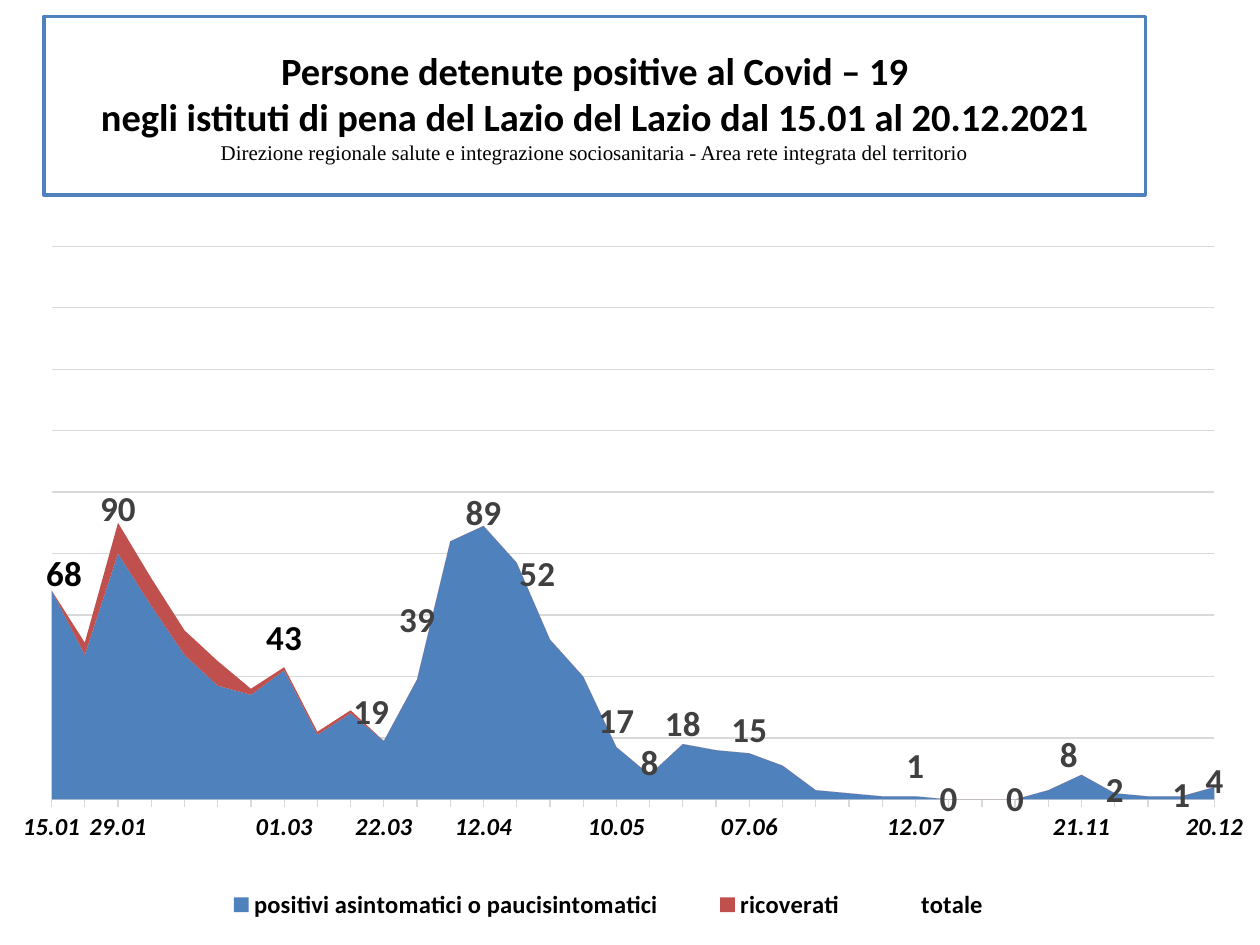
from lxml import etree
from pptx import Presentation
from pptx import util as u
from pptx.chart.data import CategoryChartData
from pptx.dml.color import RGBColor
from pptx.enum import chart as charts, shapes, text
from pptx.oxml.ns import qn

WIDTH, HEIGHT = u.Inches(10), u.Inches(7.5)
BLUE, RED, GRID, BLACK, GREY = "4F81BD", "C0504D", "D9D9D9", "000000", "404040"

DATES = {0: "15.01", 2: "29.01", 7: "01.03", 10: "22.03", 13: "12.04", 17: "10.05",
         21: "07.06", 26: "12.07", 31: "21.11", 35: "20.12"}
MILD = [68, 47, 80, 63, 47, 37, 34, 42, 21, 28, 19, 39, 84, 89, 77, 52, 40, 17,
        8, 18, 16, 15, 11, 3, 2, 1, 1, 0, 0, 0, 3, 8, 2, 1, 1, 4]
HOSPITAL = [0, 4, 10, 9, 8, 8, 2, 1, 1, 1, 0, 0] + [None] * 24
TOTAL = [68, 51, 90, 72, 55, 45, 36, 43, 22, 29, 19, 39, 84, 89, 77, 52, 40, 17,
         8, 18, 16, 15, 11, 3, 2, 1, 1, 0, 0, 0, 0, 8, 2, 1, 1, 4]
LABEL_SHIFTS = {0: (0.01, 0.12), 2: (0, 0.17), 7: (0, 0.05), 10: (-0.01, 0),
                13: (0, 0.17), 15: (-0.01, 0.02), 19: (0, 0.01),
                26: (0, -0.04), 31: (-0.01, -0.01)}
HIDDEN_LABELS = {1, 3, 4, 5, 6, 8, 9, 12, 14, 16, 20, 22, 23, 24, 25, 28, 30, 33}
BLACK_LABELS = {0, 7}


def color(hex_code):
    return RGBColor.from_string(hex_code)


def set_font(font, size, hex_code=BLACK, name="Calibri", bold=True, italic=False):
    font.size = u.Pt(size)
    font.name = name
    font.bold = bold
    font.italic = italic
    font.color.rgb = color(hex_code)


def set_line(line, hex_code, width):
    line.color.rgb = color(hex_code)
    line.width = u.Pt(width)


def write_line(para, content, **style):
    para.alignment = text.PP_ALIGN.CENTER
    span = para.add_run()
    span.text = content
    set_font(span.font, **style)


def add_element(parent, tag, value=None):
    child = etree.SubElement(parent, qn(tag))
    if value is not None:
        child.set("val", str(value))
    return child


def make_layout(**values):
    layout = etree.Element(qn("c:layout"))
    manual = add_element(layout, "c:manualLayout")
    for name, value in values.items():
        add_element(manual, f"c:{name}", value)
    return layout


def set_layout(parent, position, **values):
    for old in parent.findall(qn("c:layout")):
        parent.remove(old)
    parent.insert(position, make_layout(**values))


def add_heading(page):
    box = page.shapes.add_shape(shapes.MSO_SHAPE.RECTANGLE, u.Inches(0.35),
                                u.Inches(0.13), u.Inches(8.74), u.Inches(1.42))
    box.shadow.inherit = False
    box.fill.solid()
    box.fill.fore_color.rgb = color("FFFFFF")
    set_line(box.line, BLUE, 2)
    frame = box.text_frame
    frame.word_wrap = True
    frame.vertical_anchor = text.MSO_ANCHOR.MIDDLE
    write_line(frame.paragraphs[0], "Persone detenute positive al Covid – 19", size=22)
    write_line(frame.add_paragraph(),
               "negli istituti di pena del Lazio del Lazio dal 15.01 al 20.12.2021", size=22)
    write_line(frame.add_paragraph(),
               "Direzione regionale salute e integrazione sociosanitaria"
               " - Area rete integrata del territorio",
               size=12, name="Times New Roman", bold=False)


def label_totals(series):
    labels = series.data_labels
    labels.show_value = True
    set_font(labels.font, 20, GREY)
    for index in sorted(HIDDEN_LABELS | set(LABEL_SHIFTS)):
        hex_code = BLACK if index in BLACK_LABELS else GREY
        set_font(series.points[index].data_label.font, 20, hex_code)
        label = series._element.xpath(f"c:dLbls/c:dLbl[c:idx/@val='{index}']")[0]
        if index in HIDDEN_LABELS:
            for child in list(label)[1:]:
                label.remove(child)
            add_element(label, "c:delete", 1)
        else:
            across, down = LABEL_SHIFTS[index]
            set_layout(label, 1, x=across, y=down)
    group = series._element.find(qn("c:dLbls"))
    for leader in group.findall(qn("c:showLeaderLines")):
        group.remove(leader)
    add_element(group, "c:showLeaderLines", 0)


def style_axes(chart):
    dates = chart.category_axis
    dates.major_tick_mark = charts.XL_TICK_MARK.OUTSIDE
    dates.has_major_gridlines = False
    set_font(dates.tick_labels.font, 14, italic=True)
    set_line(dates.format.line, GRID, 0.75)
    counts = chart.value_axis
    counts.minimum_scale, counts.maximum_scale, counts.major_unit = 0, 180, 20
    counts.has_major_gridlines = True
    set_line(counts.major_gridlines.format.line, GRID, 0.75)
    counts.visible = False
    for crossing in counts._element.findall(qn("c:crossBetween")):
        crossing.set("val", "midCat")


def add_legend(chart):
    chart.has_legend = True
    legend = chart.legend
    legend.position = charts.XL_LEGEND_POSITION.BOTTOM
    legend.include_in_layout = False
    set_font(legend.font, 14)
    set_layout(legend._element, 1, xMode="edge", yMode="edge",
               x=0.14, y=0.91, w=0.68, h=0.07)


def add_case_chart(page):
    data = CategoryChartData()
    data.categories = [DATES.get(index, "") for index in range(len(TOTAL))]
    data.add_series("positivi asintomatici o paucisintomatici", MILD)
    data.add_series("ricoverati", HOSPITAL)
    data.add_series("totale", TOTAL)
    chart = page.shapes.add_chart(charts.XL_CHART_TYPE.AREA_STACKED, u.Inches(0.03),
                                  u.Inches(1.7), WIDTH, u.Inches(5.8), data).chart
    chart.has_title = False
    set_font(chart.font, 10, bold=False)
    mild, hospital, total = chart.plots[0].series
    for series, hex_code in ((mild, BLUE), (hospital, RED)):
        series.format.fill.solid()
        series.format.fill.fore_color.rgb = color(hex_code)
    total.format.fill.background()
    total.format.line.fill.background()
    label_totals(total)
    style_axes(chart)
    set_layout(chart._chartSpace.chart.plotArea, 0, layoutTarget="inner",
               xMode="edge", yMode="edge", x=0.038, y=0.044, w=0.923, h=0.757)
    add_legend(chart)


def main():
    deck = Presentation()
    deck.slide_width, deck.slide_height = WIDTH, HEIGHT
    page = deck.slides.add_slide(deck.slide_layouts[6])
    add_heading(page)
    add_case_chart(page)
    deck.save("out.pptx")


if __name__ == "__main__":
    main()
